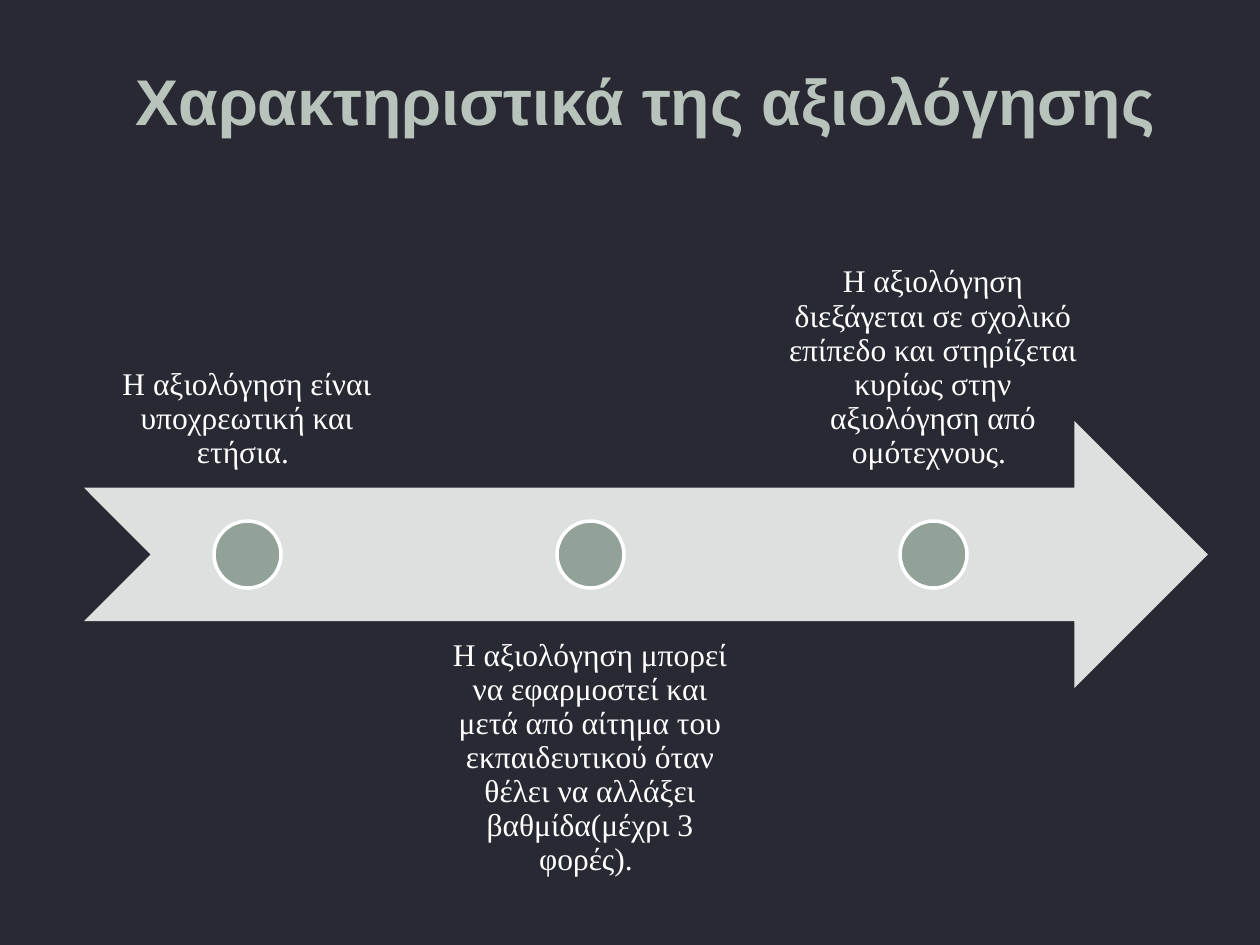
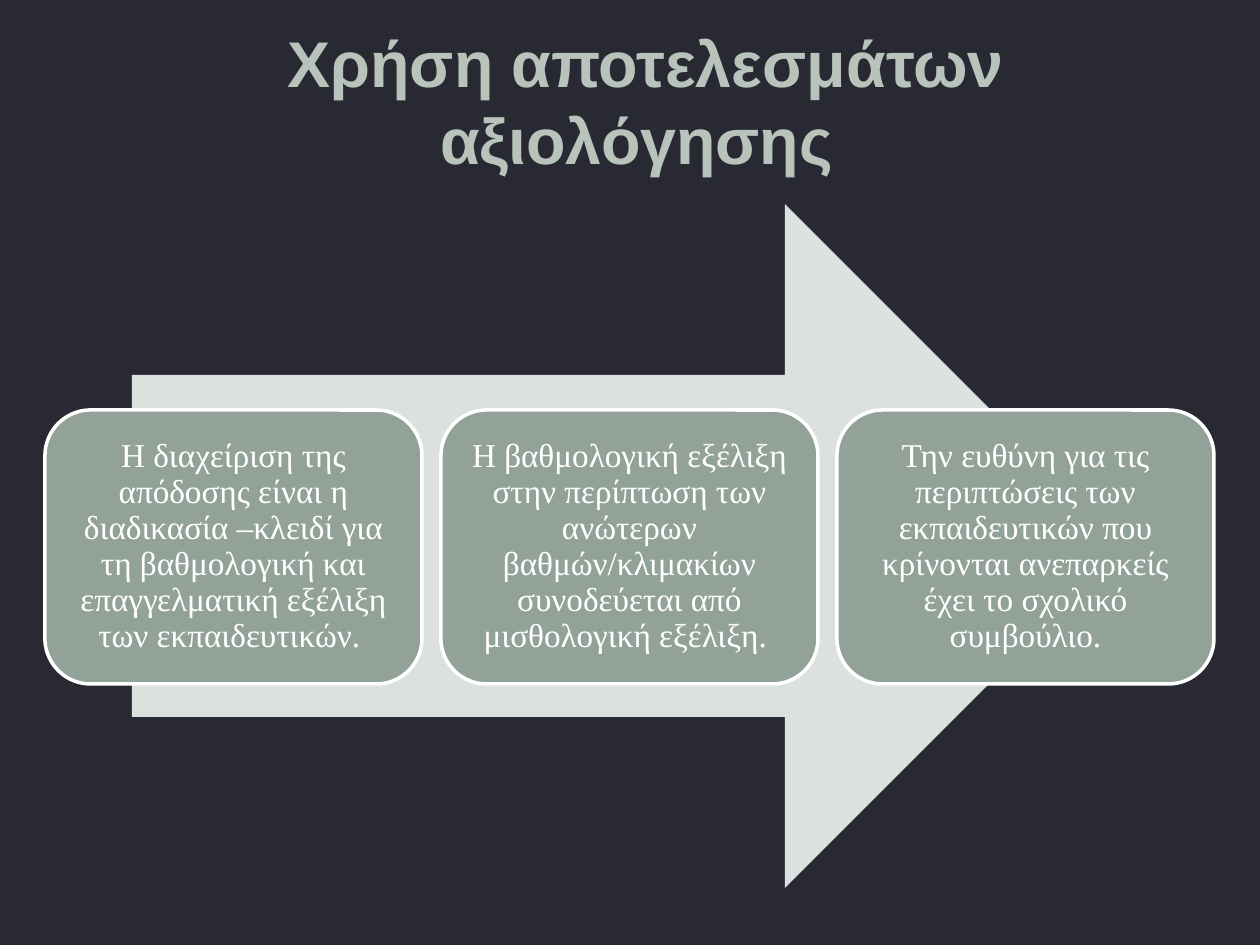
from dataclasses import dataclass

from pptx import Presentation
from pptx.dml.color import RGBColor
from pptx.enum.shapes import MSO_SHAPE as Kind
from pptx.enum.text import MSO_ANCHOR as Anchor, PP_ALIGN as Align
from pptx.shapes.autoshape import Shape
from pptx.slide import Slide
from pptx.util import Emu, Pt

NIGHT = RGBColor(0x29, 0x29, 0x34)
MINT = RGBColor(0xB7, 0xC3, 0xBB)
PALE = RGBColor(0xDC, 0xE0, 0xDE)
SAGE = RGBColor(0x93, 0xA2, 0x99)
WHITE = RGBColor(0xFF, 0xFF, 0xFF)
SERIF = "Times New Roman"
SANS = "Arial"
SCALE = 914400 / 126


@dataclass(frozen=True)
class Box:
    left: int
    top: int
    width: int
    height: int

    def emu(self) -> tuple[Emu, ...]:
        sides = (self.left, self.top, self.width, self.height)
        return tuple(px(side) for side in sides)


@dataclass(frozen=True)
class Step:
    text: str
    above: bool


TITLE = Box(84, 32, 1124, 136)
STEPS = (
    Step("Η αξιολόγηση είναι υποχρεωτική και ετήσια. ", True),
    Step(
        "Η αξιολόγηση μπορεί να εφαρμοστεί και μετά από αίτημα του "
        "εκπαιδευτικού όταν θέλει να αλλάξει βαθμίδα(μέχρι 3 φορές). ",
        False,
    ),
    Step(
        "Η αξιολόγηση διεξάγεται σε σχολικό επίπεδο και στηρίζεται κυρίως "
        "στην αξιολόγηση από ομότεχνους. ",
        True,
    ),
)
CARDS = (
    "Η διαχείριση της απόδοσης είναι η διαδικασία –κλειδί για τη "
    "βαθμολογική και επαγγελματική εξέλιξη των εκπαιδευτικών. ",
    "Η βαθμολογική εξέλιξη στην περίπτωση των ανώτερων βαθμών/κλιμακίων "
    "συνοδεύεται από μισθολογική εξέλιξη. ",
    "Την ευθύνη για τις περιπτώσεις των εκπαιδευτικών που κρίνονται "
    "ανεπαρκείς έχει το σχολικό συμβούλιο.",
)


def px(size: int) -> Emu:
    return Emu(round(size * SCALE))


def write(
    shape: Shape,
    text: str,
    *,
    size: float,
    font: str = SERIF,
    color: RGBColor = WHITE,
    bold: bool = False,
    anchor: Anchor = Anchor.MIDDLE,
    inset: int = 13,
    lines: float = 0.9,
) -> None:
    frame = shape.text_frame
    frame.word_wrap = True
    frame.vertical_anchor = anchor
    frame.margin_left = frame.margin_right = px(inset)
    frame.margin_top = frame.margin_bottom = px(inset)
    para = frame.paragraphs[0]
    para.alignment = Align.CENTER
    para.line_spacing = lines
    run = para.add_run()
    run.text = text
    run.font.name = font
    run.font.size = Pt(size)
    run.font.bold = bold
    run.font.color.rgb = color


def draw(slide: Slide, kind: Kind, box: Box, fill: RGBColor, rim: bool = False) -> Shape:
    shape = slide.shapes.add_shape(kind, *box.emu())
    shape.shadow.inherit = False
    shape.fill.solid()
    shape.fill.fore_color.rgb = fill
    if rim:
        shape.line.color.rgb = WHITE
        shape.line.width = Pt(2)
    else:
        shape.line.fill.background()
    return shape


def label(slide: Slide, box: Box) -> Shape:
    return slide.shapes.add_textbox(*box.emu())


def start(deck: Presentation, title: str) -> Slide:
    slide = deck.slides.add_slide(deck.slide_layouts[6])
    slide.background.fill.solid()
    slide.background.fill.fore_color.rgb = NIGHT
    write(label(slide, TITLE), title, size=36.9, font=SANS, color=MINT, bold=True, lines=1.0)
    return slide


def traits(deck: Presentation) -> None:
    slide = start(deck, "Χαρακτηριστικά της αξιολόγησης")
    arrow = Box(84, 421, 1124, 267)
    draw(slide, Kind.NOTCHED_RIGHT_ARROW, arrow, PALE)
    width, pitch, dot = 326, 343, 67
    for index, step in enumerate(STEPS):
        left = arrow.left + index * pitch
        top = 221 if step.above else 621
        note = label(slide, Box(left, top, width, arrow.height))
        anchor = Anchor.BOTTOM if step.above else Anchor.TOP
        write(note, step.text, size=18, anchor=anchor, inset=18)
        inner = left + (width - dot + 1) // 2
        middle = arrow.top + (arrow.height - dot) // 2
        draw(slide, Kind.OVAL, Box(inner, middle, dot, dot), SAGE, rim=True)


def results(deck: Presentation) -> None:
    slide = start(deck, "Χρήση αποτελεσμάτων αξιολόγησης ")
    draw(slide, Kind.RIGHT_ARROW, Box(132, 204, 995, 684), PALE)
    for index, text in enumerate(CARDS):
        box = Box(45 + index * 396, 410, 377, 274)
        card = draw(slide, Kind.ROUNDED_RECTANGLE, box, SAGE, rim=True)
        write(card, text, size=19, inset=10)


def main() -> None:
    deck = Presentation()
    deck.slide_width = px(1260)
    deck.slide_height = px(945)
    traits(deck)
    results(deck)
    deck.save("out.pptx")


if __name__ == "__main__":
    main()
